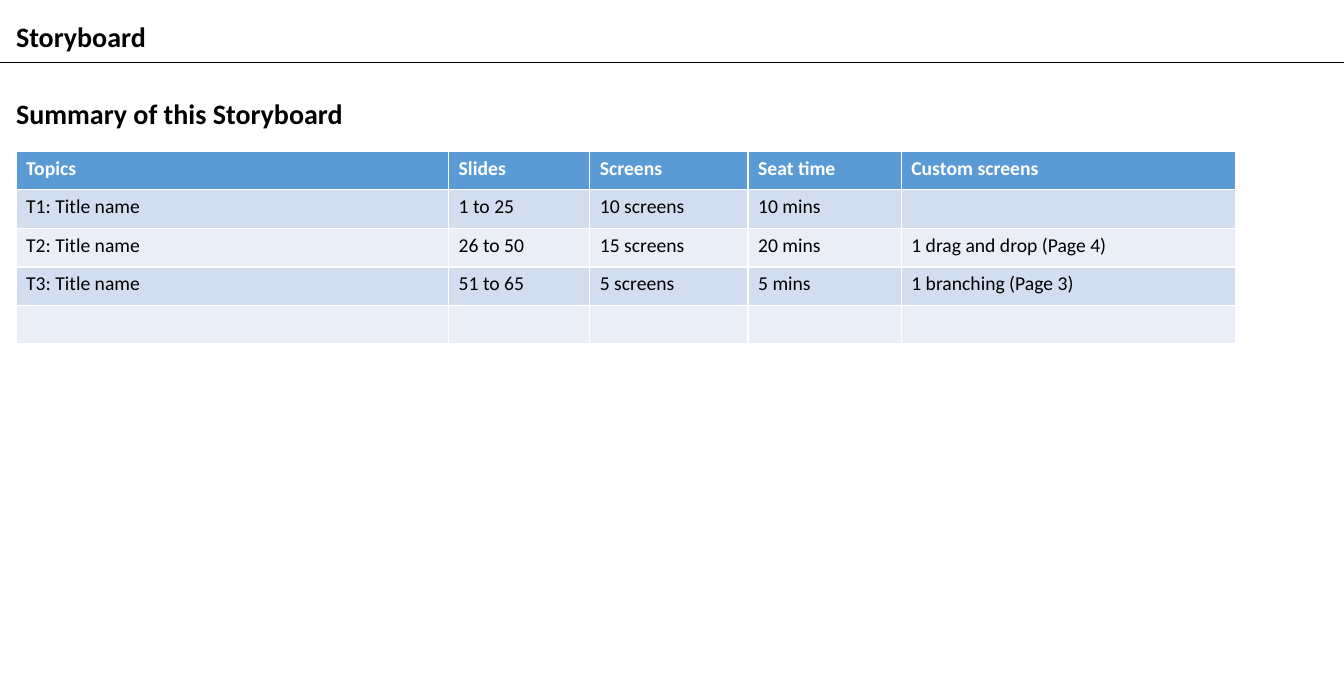
"""Build the storyboard summary slide."""
from pptx import Presentation
from pptx import util as u
from pptx.dml.color import RGBColor
from pptx.enum import shapes, text
from pptx.oxml.ns import qn
from lxml import etree

COLORS = {
    "white": "FFFFFF",
    "black": "000000",
    "header": "5B9BD5",
    "odd": "D2DEEF",
    "even": "EAEFF7",
}
FONT = "Calibri"


def rgb(name):
    return RGBColor.from_string(COLORS[name])


def set_font(p, size, color, bold):
    p.font.name = FONT
    p.font.size = u.Pt(size)
    p.font.bold = bold
    p.font.color.rgb = rgb(color)


prs = Presentation()
prs.slide_width = u.Inches(13.33)
prs.slide_height = u.Inches(6.69)
s = prs.slides.add_slide(prs.slide_layouts[6])

headings = [
    ("Storyboard", 0.15, 9.9, 0.41),
    ("Summary of this Storyboard", 0.93, 13.17, 0.39),
]
for heading, top, width, height in headings:
    sp = s.shapes.add_shape(
        shapes.MSO_SHAPE.RECTANGLE,
        u.Inches(0.16), u.Inches(top), u.Inches(width), u.Inches(height),
    )
    sp.shadow.inherit = False
    sp.fill.solid()
    sp.fill.fore_color.rgb = rgb("white")
    sp.line.fill.background()
    tf = sp.text_frame
    tf.word_wrap = True
    tf.margin_left = tf.margin_right = tf.margin_top = tf.margin_bottom = 0
    tf.vertical_anchor = text.MSO_ANCHOR.MIDDLE
    p = tf.paragraphs[0]
    p.text = heading
    p.alignment = text.PP_ALIGN.LEFT
    set_font(p, 20, "black", True)

rule = s.shapes.add_connector(
    shapes.MSO_CONNECTOR.STRAIGHT,
    u.Inches(0), u.Inches(0.62), prs.slide_width, u.Inches(0.62),
)
rule.line.color.rgb = rgb("black")
rule.line.width = u.Pt(0.5)
etree.SubElement(rule._element.spPr, qn("a:effectLst"))

rows = [
    ["Topics", "Slides", "Screens", "Seat time", "Custom screens"],
    ["T1: Title name", "1 to 25", "10 screens", "10 mins", ""],
    ["T2: Title name", "26 to 50", "15 screens", "20 mins", "1 drag and drop (Page 4)"],
    ["T3: Title name", "51 to 65", "5 screens", "5 mins", "1 branching (Page 3)"],
    ["", "", "", "", ""],
]
col_widths = [4.29, 1.4, 1.57, 1.52, 3.32]
table = s.shapes.add_table(
    len(rows), len(col_widths),
    u.Inches(0.16), u.Inches(1.5), u.Inches(sum(col_widths)), u.Inches(1.91),
).table
for column, width in zip(table.columns, col_widths):
    column.width = u.Inches(width)

for i, row in enumerate(rows):
    is_header = i == 0
    fill = "header" if is_header else "odd" if i % 2 else "even"
    for j, value in enumerate(row):
        cell = table.cell(i, j)
        cell.fill.solid()
        cell.fill.fore_color.rgb = rgb(fill)
        p = cell.text_frame.paragraphs[0]
        p.text = value
        set_font(p, 14, "white" if is_header else "black", is_header)

prs.save("out.pptx")
